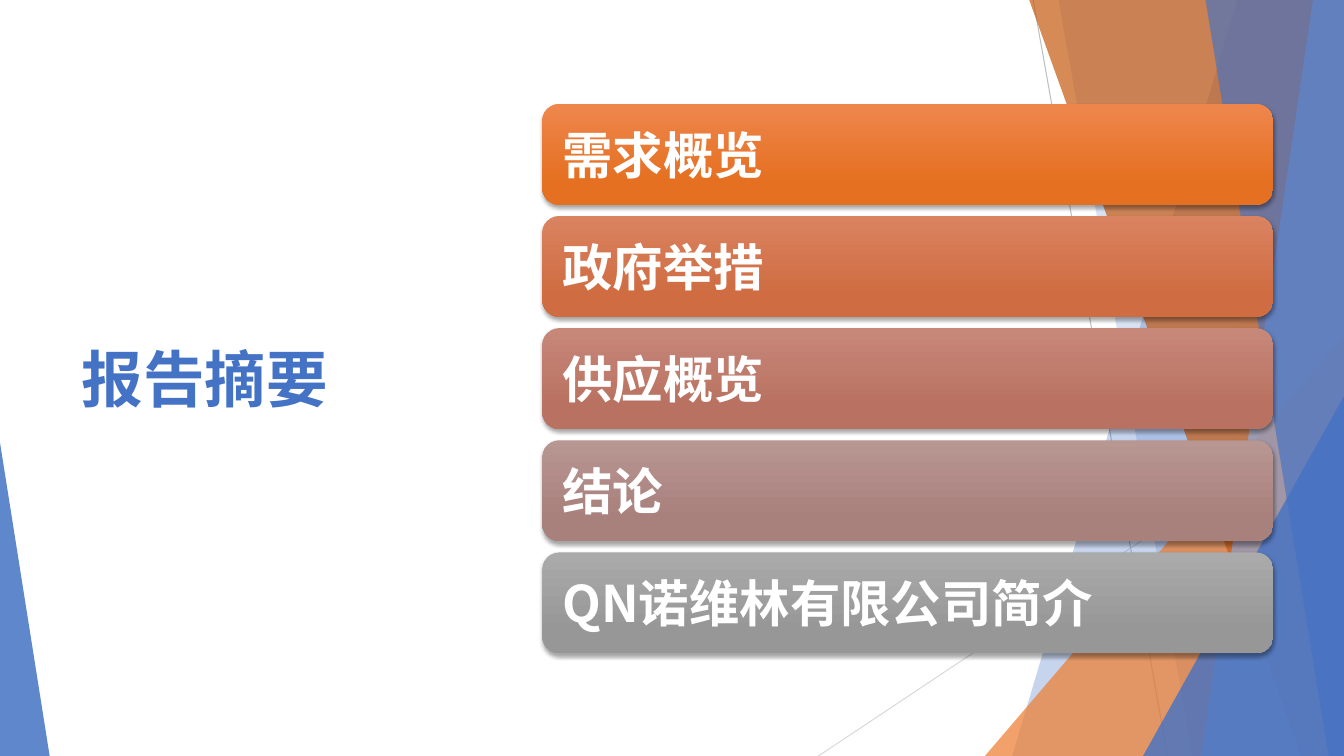
from lxml.etree import SubElement
from pptx import Presentation
from pptx.dml.color import RGBColor
from pptx.enum.shapes import MSO_CONNECTOR, MSO_SHAPE
from pptx.enum.text import MSO_ANCHOR, PP_ALIGN
from pptx.oxml.ns import qn
from pptx.util import Pt

WHITE = RGBColor(0xFF, 0xFF, 0xFF)
BLUE = RGBColor(0x44, 0x72, 0xC4)
LIGHT_BLUE = RGBColor(0x8F, 0xAA, 0xDC)
ORANGE = RGBColor(0xED, 0x7D, 0x31)
DARK_ORANGE = RGBColor(0xC5, 0x5A, 0x11)
MID_GREY = RGBColor(0xBF, 0xBF, 0xBF)
PALE_GREY = RGBColor(0xD9, 0xD9, 0xD9)

# Content: label, upper colour, lower colour
TITLE = "报告摘要"
TOPICS = [
    ("需求概览", RGBColor(0xEE, 0x86, 0x4C), RGBColor(0xE5, 0x70, 0x21)),
    ("政府举措", RGBColor(0xDA, 0x83, 0x61), RGBColor(0xCF, 0x6C, 0x41)),
    ("供应概览", RGBColor(0xC7, 0x88, 0x7A), RGBColor(0xB9, 0x71, 0x61)),
    ("结论", RGBColor(0xB8, 0x96, 0x92), RGBColor(0xA8, 0x80, 0x7C)),
    ("QN诺维林有限公司简介", RGBColor(0xAA, 0xAA, 0xAA), RGBColor(0x97, 0x97, 0x97)),
]

# Decoration, back to front, in points
WIDTH, HEIGHT = 960, 540
BAND_TOP = -0.6
LINES = [
    ((738, 0, 834, HEIGHT), MID_GREY),
    ((WIDTH, 290, 584.6, HEIGHT), PALE_GREY),
]
# A band has its left edge at (top, bottom) and runs to the right side of the slide.
# A triangle has (left, top, width, peak position) and stands on the bottom.
FACETS = [
    ("band", (884, 723), BLUE, 30),
    ("band", (756, 852), BLUE, 20),
    ("triangle", (703.5, 240, 256.5, 1), ORANGE, 72),
    ("band", (735, 929.5), DARK_ORANGE, 70),
    ("band", (938, 858), LIGHT_BLUE, 70),
    ("band", (861, 949), BLUE, 65),
    ("triangle", (816.5, 283, 143.5, 1), BLUE, 80),
    ("triangle", (0, 316, 35.5, 0), BLUE, 85),
]

# Topic panels, in points
PANEL_LEFT, PANEL_TOP = 387.4, 74.2
PANEL_WIDTH, PANEL_HEIGHT, PANEL_PITCH = 522, 72, 80.1
PANEL_INSET = 10.8

FONT = "Noto Sans CJK SC"
TITLE_FORMAT = {"size": Pt(44), "bold": True, "name": FONT}
TOPIC_FORMAT = {"size": Pt(36), "bold": True, "name": FONT}


def write_text(text_frame, text, formats, colour):
    text_frame.word_wrap = True
    text_frame.vertical_anchor = MSO_ANCHOR.MIDDLE
    paragraph = text_frame.paragraphs[0]
    paragraph.alignment = PP_ALIGN.LEFT
    run = paragraph.add_run()
    run.text = text
    for attribute, value in formats.items():
        setattr(run.font, attribute, value)
    run.font.color.rgb = colour
    SubElement(run.font._element, qn("a:ea"), typeface=FONT)


def add_facet(slide, kind, geometry, colour, opacity):
    if kind == "band":
        top_x, bottom_x = geometry
        builder = slide.shapes.build_freeform(Pt(top_x), Pt(BAND_TOP))
        corners = [(WIDTH, BAND_TOP), (WIDTH, HEIGHT), (bottom_x, HEIGHT)]
        builder.add_line_segments([(Pt(x), Pt(y)) for x, y in corners], close=True)
        shape = builder.convert_to_shape()
    else:
        left, top, width, peak = geometry
        shape = slide.shapes.add_shape(
            MSO_SHAPE.ISOSCELES_TRIANGLE, Pt(left), Pt(top), Pt(width), Pt(HEIGHT - top))
        shape.adjustments[0] = peak
    shape.shadow.inherit = False
    shape.line.fill.background()
    shape.fill.solid()
    shape.fill.fore_color.rgb = colour
    fill_colour = shape._element.spPr.find(qn("a:solidFill"))[0]
    SubElement(fill_colour, qn("a:alpha"), val=str(opacity * 1000))


def add_panel(slide, index, label, upper, lower):
    panel = slide.shapes.add_shape(
        MSO_SHAPE.ROUNDED_RECTANGLE, Pt(PANEL_LEFT), Pt(PANEL_TOP + index * PANEL_PITCH),
        Pt(PANEL_WIDTH), Pt(PANEL_HEIGHT))
    panel.line.fill.background()
    panel.fill.gradient()
    panel.fill.gradient_angle = 270
    for stop, position, colour in zip(panel.fill.gradient_stops, (0, 0.78), (upper, lower)):
        stop.position = position
        stop.color.rgb = colour

    # Soft shadow below the panel
    panel.shadow.inherit = False
    effects = panel._element.spPr.find(qn("a:effectLst"))
    shadow = SubElement(effects, qn("a:outerShdw"), blurRad=str(Pt(3)), dist=str(Pt(2)),
                        dir="5400000", rotWithShape="0")
    shadow_colour = SubElement(shadow, qn("a:srgbClr"), val="000000")
    SubElement(shadow_colour, qn("a:alpha"), val="35000")

    for side in ("left", "top", "right", "bottom"):
        setattr(panel.text_frame, f"margin_{side}", Pt(PANEL_INSET))
    write_text(panel.text_frame, label, TOPIC_FORMAT, WHITE)


def main():
    presentation = Presentation()
    presentation.slide_width, presentation.slide_height = Pt(WIDTH), Pt(HEIGHT)
    slide = presentation.slides.add_slide(presentation.slide_layouts[5])

    # Background decoration
    for ends, colour in LINES:
        connector = slide.shapes.add_connector(MSO_CONNECTOR.STRAIGHT, *map(Pt, ends))
        connector.line.color.rgb = colour
        connector.line.width = Pt(0.75)
        SubElement(connector._element.spPr, qn("a:effectLst"))
    for facet in FACETS:
        add_facet(slide, *facet)

    # Title
    title = slide.shapes.title
    title.left, title.top, title.width, title.height = Pt(51), Pt(109), Pt(279.5), Pt(322.5)
    write_text(title.text_frame, TITLE, TITLE_FORMAT, BLUE)

    # Topics
    for index, topic in enumerate(TOPICS):
        add_panel(slide, index, *topic)

    presentation.save("out.pptx")


if __name__ == "__main__":
    main()
